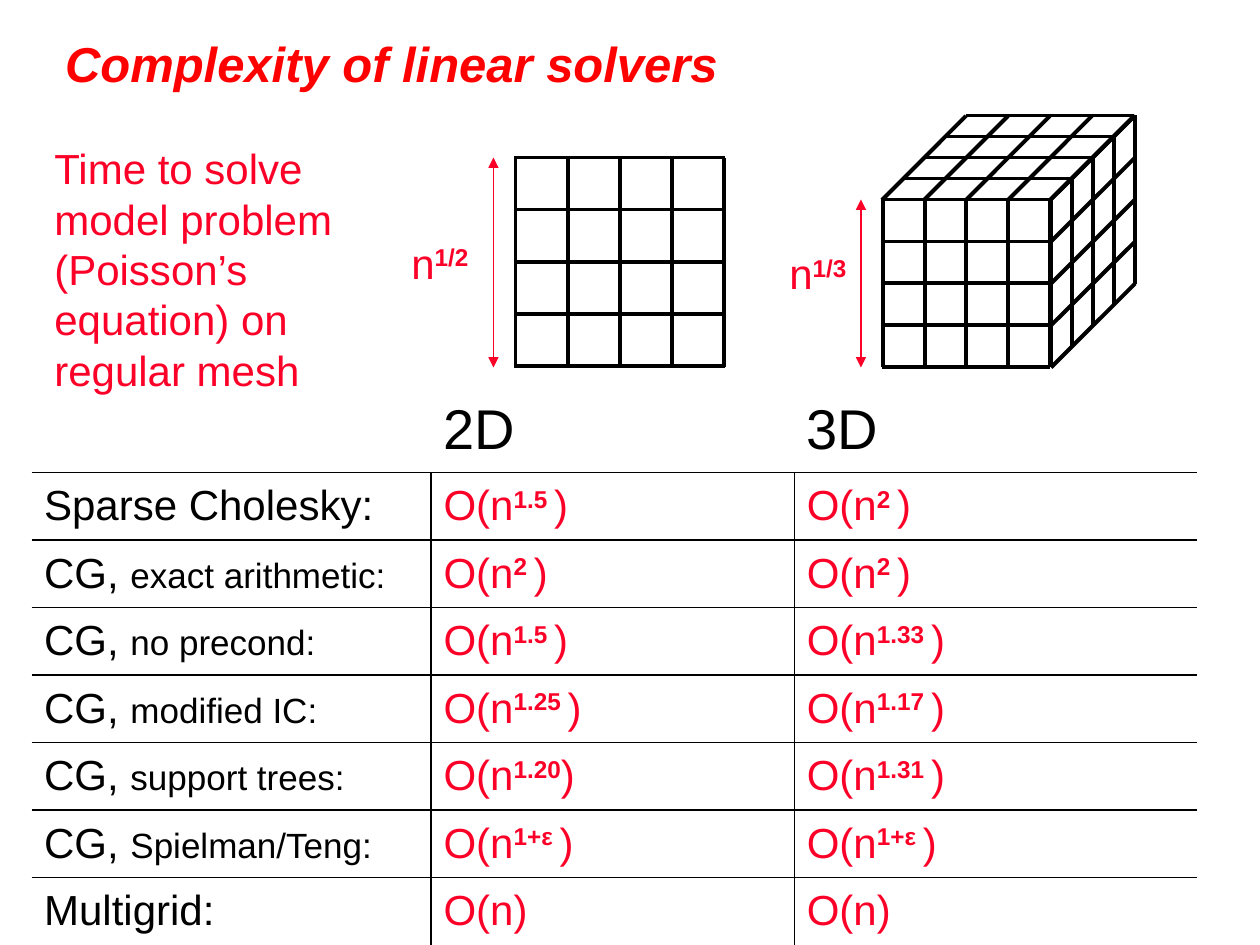
from dataclasses import dataclass

from lxml.etree import SubElement
from pptx import Presentation
from pptx.dml.color import RGBColor
from pptx.enum.shapes import MSO_CONNECTOR
from pptx.enum.text import MSO_ANCHOR, MSO_AUTO_SIZE, PP_ALIGN
from pptx.oxml.ns import qn
from pptx.util import Inches, Pt


@dataclass(frozen=True)
class Theme:
    font: str = "Arial"
    title: str = "FF0000"
    accent: str = "FC0128"
    ink: str = "000000"
    title_size: int = 28
    head_size: int = 32
    body_size: int = 24
    small_size: int = 20
    mesh_width: float = 2.25
    thin_width: float = 1


def grid(n):
    """Length of n grid units: the slide is 120 columns by 90 rows."""
    return Inches(n / 12)


class SlideBuilder:
    def __init__(self, prs, theme):
        self.theme = theme
        self.s = prs.slides.add_slide(prs.slide_layouts[5])

    def style(self, r, size, color, bold=False, italic=False):
        f = r.font
        f.name, f.size, f.bold, f.italic = self.theme.font, Pt(size), bold, italic
        f.color.rgb = RGBColor.from_string(color)

    def power(self, p, text):
        """Write 'base|exponent|rest' with the exponent raised and bold."""
        for i, part in enumerate(text.split("|")):
            if not part:
                continue
            r = p.add_run()
            r.text = part
            self.style(r, self.theme.body_size, self.theme.accent, bold=i == 1)
            if i == 1:
                r._r.get_or_add_rPr().set("baseline", "30000")

    def title(self, text, x, y, w, h):
        sp = self.s.shapes.title
        sp.left, sp.top, sp.width, sp.height = map(grid, (x, y, w, h))
        tf = sp.text_frame
        tf.text = text
        tf.vertical_anchor = MSO_ANCHOR.MIDDLE
        p = tf.paragraphs[0]
        p.alignment = PP_ALIGN.LEFT
        self.style(p.runs[0], self.theme.title_size, self.theme.title, True, True)

    def text(self, parent, text, x, y, w, h, wrap=True, leading=None):
        sp = parent.add_textbox(*map(grid, (x, y, w, h)))
        tf = sp.text_frame
        tf.word_wrap = wrap
        tf.auto_size = MSO_AUTO_SIZE.SHAPE_TO_FIT_TEXT
        p = tf.paragraphs[0]
        if leading:
            p.line_spacing = Pt(leading)
        self.power(p, text)

    def line(self, parent, start, end, color, width, arrows=False):
        c = parent.add_connector(MSO_CONNECTOR.STRAIGHT, *map(grid, (*start, *end)))
        c.line.color.rgb = RGBColor.from_string(color)
        c.line.width = Pt(width)
        if arrows:
            ln = c.line._get_or_add_ln()
            for tag in ("a:headEnd", "a:tailEnd"):
                SubElement(ln, qn(tag), type="triangle")
        SubElement(c._element.spPr, qn("a:effectLst"))

    def ruling(self, parent, start, side, step, count=5):
        """Draw parallel mesh lines along side, each one step from the last."""
        for i in range(count):
            x, y = (o + d * i for o, d in zip(start, step))
            self.line(parent, (x, y), (x + side[0], y + side[1]),
                      self.theme.ink, self.theme.mesh_width)

    def dimension(self, parent, label, x, top, bottom, label_x, label_y):
        self.text(parent, label, label_x, label_y, 8.4, 6, wrap=False)
        self.line(parent, (x, bottom), (x, top), self.theme.accent,
                  self.theme.thin_width, arrows=True)

    def borders(self, cell, sides):
        tcPr = cell._tc.get_or_add_tcPr()
        for side in "LRTB":
            ln = SubElement(tcPr, qn(f"a:ln{side}"), w=str(Pt(self.theme.thin_width)))
            if side in sides:
                fill = SubElement(ln, qn("a:solidFill"))
                SubElement(fill, qn("a:srgbClr"), val=self.theme.ink)
            else:
                SubElement(ln, qn("a:noFill"))

    def table(self, heads, rows, x, y, widths, head_h, row_h):
        t = self.theme
        n_rows, n_cols = len(rows) + 1, len(widths)
        height = head_h + row_h * len(rows)
        tbl = self.s.shapes.add_table(
            n_rows, n_cols, *map(grid, (x, y, sum(widths), height))).table
        tbl.first_row = tbl.horz_banding = False
        for col, w in zip(tbl.columns, widths):
            col.width = grid(w)
        for i, row in enumerate(tbl.rows):
            row.height = grid(row_h if i else head_h)
            for j, cell in enumerate(row.cells):
                sides = "B" if i < n_rows - 1 else ""
                if i:
                    sides += "T" + "L" * (j > 0) + "R" * (j < n_cols - 1)
                self.borders(cell, sides)
                cell.fill.background()
                cell.vertical_anchor = MSO_ANCHOR.MIDDLE
                p = cell.text_frame.paragraphs[0]
                if i and j:
                    self.power(p, rows[i - 1][j])
                    continue
                parts = rows[i - 1][0].split("|") if i else [heads[j]]
                sizes = (t.body_size, t.small_size) if i else (t.head_size,)
                for part, size in zip(parts, sizes):
                    if part:
                        r = p.add_run()
                        r.text = part
                        self.style(r, size, t.ink)


HEADS = ("", "2D", "3D")
ROWS = (
    ("Sparse Cholesky:", "O(n|1.5 |)", "O(n|2 |)"),
    ("CG, |exact arithmetic:", "O(n|2 |)", "O(n|2 |)"),
    ("CG, |no precond:", "O(n|1.5 |)", "O(n|1.33 |)"),
    ("CG, |modified IC:", "O(n|1.25 |)", "O(n|1.17 |)"),
    ("CG, |support trees:", "O(n|1.20|)", "O(n|1.31 |)"),
    ("CG, |Spielman/Teng:", "O(n|1+ε |)", "O(n|1+ε |)"),
    ("Multigrid:", "O(n)", "O(n)"),
)


def main():
    prs = Presentation()
    prs.slide_width, prs.slide_height = grid(120), grid(90)
    b = SlideBuilder(prs, Theme())
    b.title("Complexity of linear solvers", 5, 2, 112, 8)
    b.table(HEADS, ROWS, 3, 37, (38.05, 34.6, 38.35), 8, 45 / 7)

    square = b.s.shapes.add_group_shape().shapes
    b.ruling(square, (49, 15), (20, 0), (0, 4.96))
    b.ruling(square, (49.1, 35), (0, -20), (4.97, 0))
    b.dimension(square, "n|1/2", 47, 15, 35, 38, 22)

    cube = b.s.shapes.add_group_shape().shapes
    across, down, back = (16, 0), (0, 16), (8, -8)
    # Front, top and right faces
    b.ruling(cube, (84, 23), across, (0, 3.98), count=4)
    b.ruling(cube, (84.1, 35), (0, -16), (3.97, 0))
    b.ruling(cube, (92, 11), across, (-2, 2))
    b.ruling(cube, (84, 19.05), back, (4, 0))
    b.ruling(cube, (100.1, 19), down, (2, -2))
    b.ruling(cube, (100.1, 19), back, (0, 4))
    b.dimension(cube, "n|1/3", 82, 19, 35, 74, 23)

    b.text(b.s.shapes, "Time to solve model problem (Poisson’s equation) on regular mesh",
           4, 13, 29, 25, leading=28.8)
    prs.save("out.pptx")


if __name__ == "__main__":
    main()
